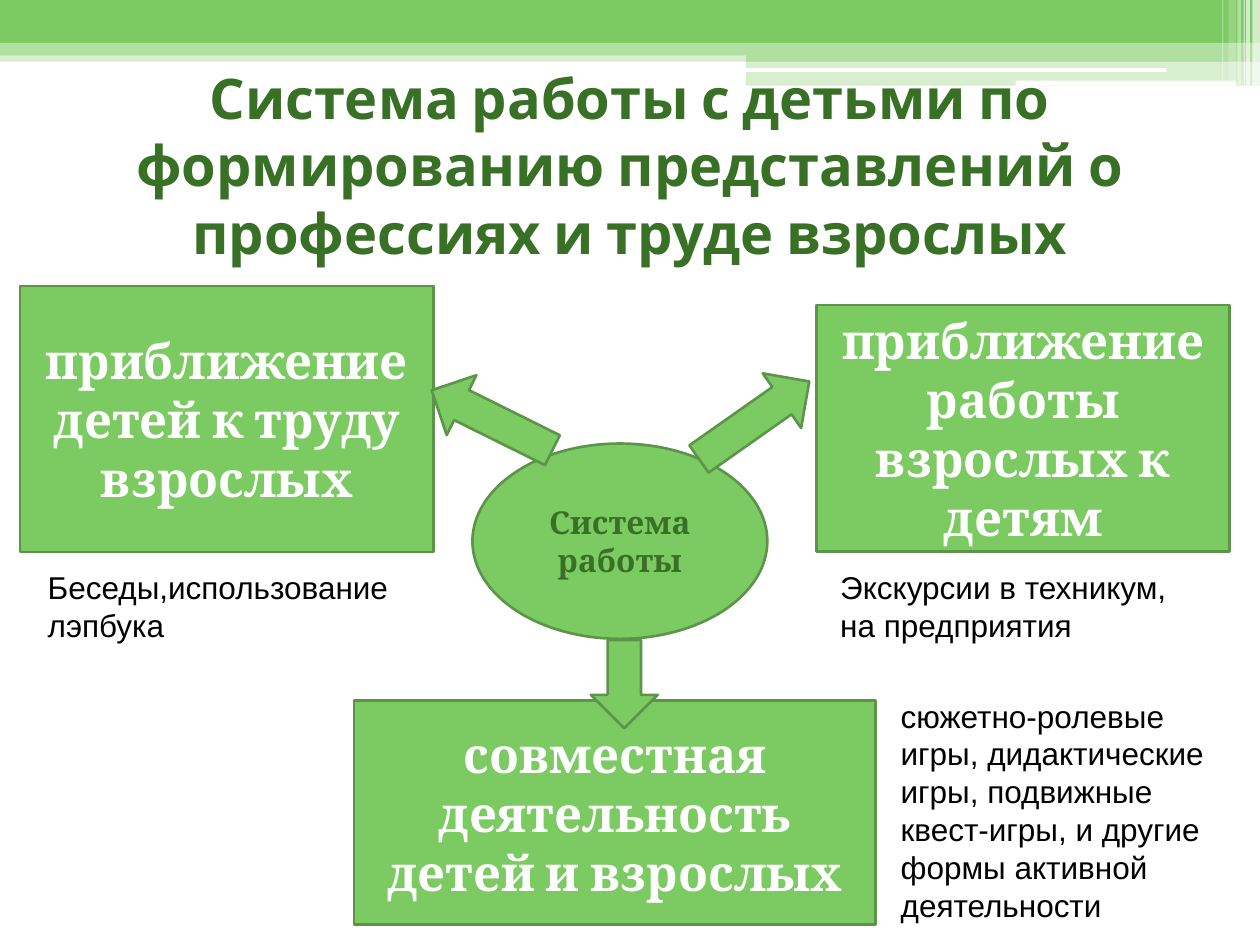
import pptx
import pptx.util
import pptx.dml.color
import pptx.enum.shapes
import pptx.enum.text
import pptx.oxml.ns
import lxml.etree

Inches = pptx.util.Inches
RGBColor = pptx.dml.color.RGBColor
SHAPE = pptx.enum.shapes.MSO_SHAPE
ALIGN = pptx.enum.text.PP_ALIGN
ANCHOR = pptx.enum.text.MSO_ANCHOR

GREEN = RGBColor(0x7C, 0xCA, 0x62)
PALE_GREEN = RGBColor(0xB0, 0xDF, 0xA0)
EDGE_GREEN = RGBColor(0x5C, 0x95, 0x49)
DARK_GREEN = RGBColor(0x38, 0x70, 0x26)
WHITE = RGBColor(0xFF, 0xFF, 0xFF)
BLACK = RGBColor(0, 0, 0)


def write(shape, lines, size, font, color, bold=True, align=ALIGN.CENTER, anchor=ANCHOR.MIDDLE):
    """Fill a shape with one evenly styled paragraph per line."""
    frame = shape.text_frame
    frame.word_wrap = True
    frame.vertical_anchor = anchor
    frame.text = "\n".join(lines)
    for paragraph in frame.paragraphs:
        paragraph.alignment = align
        paragraph.font.size = pptx.util.Pt(size)
        paragraph.font.name = font
        paragraph.font.bold = bold
        paragraph.font.color.rgb = color


def add_bar(slide, box, color, opacity=100, kind=SHAPE.RECTANGLE):
    """Add a borderless bar, optionally translucent."""
    bar = slide.shapes.add_shape(kind, *map(Inches, box))
    bar.shadow.inherit = False
    bar.fill.solid()
    bar.fill.fore_color.rgb = color
    bar.line.fill.background()
    if opacity < 100:
        tint = bar.fill._xPr.find(".//" + pptx.oxml.ns.qn("a:srgbClr"))
        alpha = lxml.etree.SubElement(tint, pptx.oxml.ns.qn("a:alpha"))
        alpha.set("val", str(opacity * 1000))


def add_block(slide, kind, box, rotation=0):
    """Add a green outlined shape."""
    block = slide.shapes.add_shape(kind, *map(Inches, box))
    block.shadow.inherit = False
    block.fill.solid()
    block.fill.fore_color.rgb = GREEN
    block.line.color.rgb = EDGE_GREEN
    block.line.width = pptx.util.Pt(1.5)
    block.rotation = rotation
    return block


def add_header(slide, left, top, width):
    """Draw the layered band with its white streaks along the top edge."""
    step = left + 0.592 * width
    right = left + width
    add_bar(slide, (left, top + 0.4, width, 0.09), PALE_GREEN, 50)
    add_bar(slide, (left, top, width, 0.34), GREEN)
    add_bar(slide, (left, top + 0.34, width, 0.1), PALE_GREEN)
    add_bar(slide, (step, top + 0.39, right - step, 0.1), PALE_GREEN)
    add_bar(slide, (step, top + 0.48, right - step, 0.2), PALE_GREEN, 50)
    add_bar(slide, (step - 0.01, top + 0.54, 3.35, 0.03), WHITE, kind=SHAPE.ROUNDED_RECTANGLE)
    add_bar(slide, (right - 1.94, top + 0.64, 1.75, 0.04), WHITE, kind=SHAPE.ROUNDED_RECTANGLE)
    streaks = [
        (0.06, 0.06, 0.68, 65),
        (0.11, 0.03, 0.68, 65),
        (0.13, 0.01, 0.68, 60),
        (0.18, 0.03, 0.68, 40),
        (0.25, 0.06, 0.64, 20),
        (0.3, 0.01, 0.64, 30),
    ]
    for inset, thickness, height, opacity in streaks:
        add_bar(slide, (right - inset, top, thickness, height), WHITE, opacity)


def add_title(slide, left, top, width, height):
    """Write the slide heading."""
    heading = slide.shapes.add_textbox(*map(Inches, (left, top, width, height)))
    text = "Система работы с детьми по формированию представлений о профессиях и труде взрослых"
    write(heading, [text], 32, "Cabin", DARK_GREEN)


def add_direction(slide, box, goal, caption_box, caption):
    """Place a goal card and its caption, offset from the card's corner."""
    left, top, width, height = box
    card = add_block(slide, SHAPE.RECTANGLE, box)
    write(card, [goal], 28, "Cambria", WHITE)
    dx, dy, caption_width, caption_height = caption_box
    place = (left + dx, top + dy, caption_width, caption_height)
    note = slide.shapes.add_textbox(*map(Inches, place))
    write(note, caption, 18, "Arial", BLACK, False, ALIGN.LEFT, ANCHOR.TOP)


def add_scheme(slide, left, top):
    """Draw the central oval, the three directions and the arrows to them."""
    core = add_block(slide, SHAPE.OVAL, (left + 3.59, top + 1.25, 2.34, 1.55))
    write(core, ["Система работы"], 18, "Cambria", DARK_GREEN)
    directions = [
        ((0, 0, 3.28, 2.11), "приближение детей к труду взрослых",
         (0.12, 2.19, 3.15, 0.71), ["Беседы,использование лэпбука"]),
        ((6.32, 0.15, 3.28, 1.96), "приближение работы взрослых к детям",
         (0.09, 2.04, 2.89, 0.71), ["Экскурсии в техникум,", "на предприятия"]),
        ((2.65, 3.29, 4.14, 1.78), "совместная деятельность детей и взрослых",
         (4.24, -0.08, 2.8, 1.92),
         ["сюжетно-ролевые игры, дидактические игры, подвижные квест-игры, "
          "и другие формы активной деятельности"]),
    ]
    for (dx, dy, width, height), goal, caption_box, caption in directions:
        add_direction(slide, (left + dx, top + dy, width, height), goal, caption_box, caption)
    arrows = [
        (SHAPE.RIGHT_ARROW, 3.21, 0.8, 1.07, 0.53, 206.4),
        (SHAPE.DOWN_ARROW, 5.56, 0.53, 0.53, 1.07, 234.9),
        (SHAPE.DOWN_ARROW, 4.53, 2.81, 0.53, 0.7, 0),
    ]
    for kind, dx, dy, width, height, rotation in arrows:
        add_block(slide, kind, (left + dx, top + dy, width, height), rotation)


def main():
    """Build and save the slide."""
    deck = pptx.Presentation()
    deck.slide_width = Inches(10)
    deck.slide_height = Inches(7.5)
    slide = deck.slides.add_slide(deck.slide_layouts[6])
    add_header(slide, 0, 0, 10)
    add_title(slide, 0, 0.72, 10, 1.17)
    add_scheme(slide, 0.16, 2.27)
    deck.save("out.pptx")


if __name__ == "__main__":
    main()
